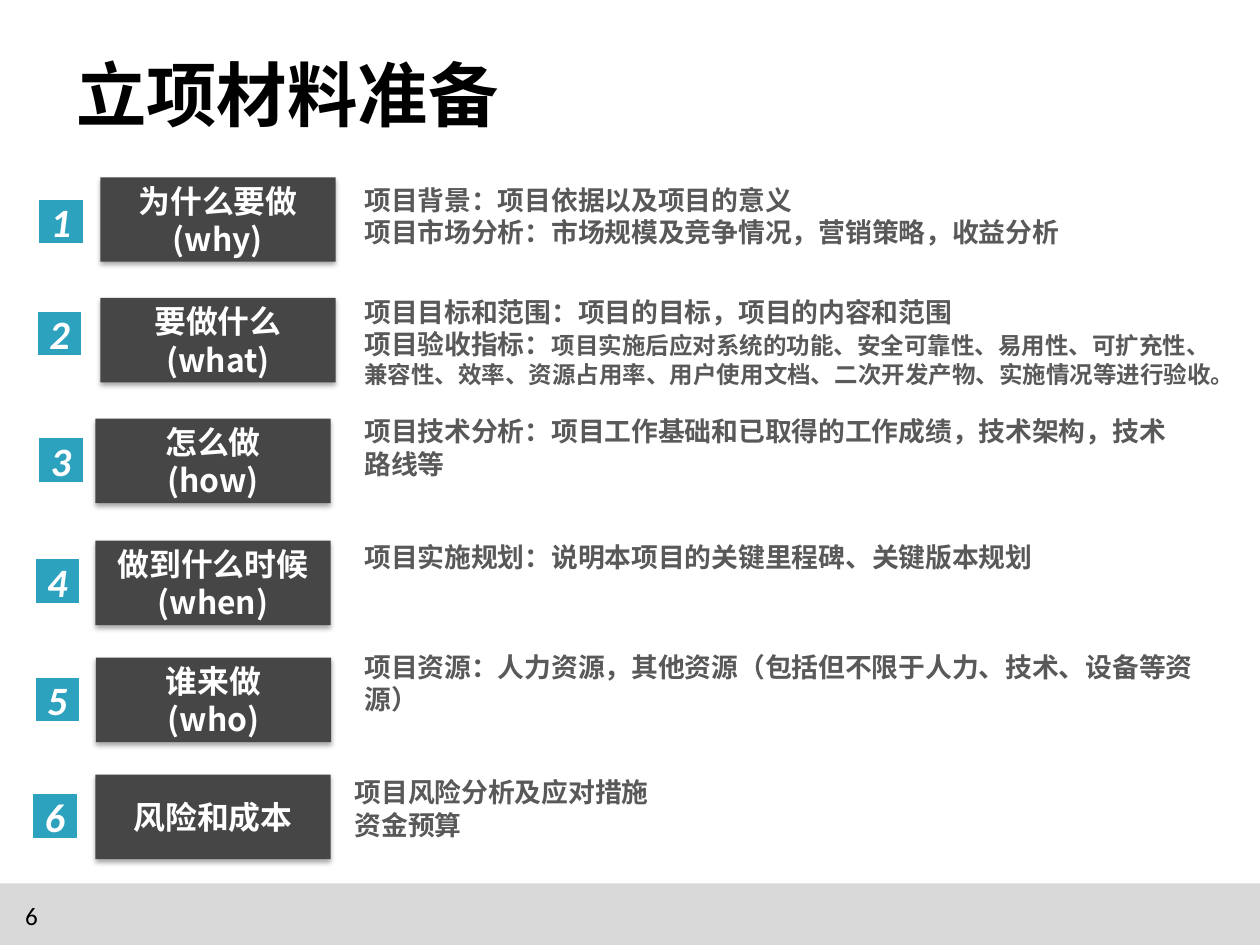
from lxml.etree import SubElement
from pptx import Presentation
from pptx.dml.color import RGBColor
from pptx.enum.shapes import MSO_SHAPE
from pptx.enum.text import MSO_ANCHOR, MSO_AUTO_SIZE, PP_ALIGN
from pptx.oxml import parse_xml
from pptx.oxml.ns import nsdecls, qn
from pptx.util import Pt

WIDTH, HEIGHT = 751.68, 563.76
BADGE_SIZE = 28
LABEL_SIZE = (140.4, 50.4)


def color(value):
    return RGBColor.from_string(value)


class SlideBuilder:
    chinese, latin = "Noto Sans CJK SC", "Calibri"
    black, white, gray = "000000", "FFFFFF", "595959"
    teal, dark, band = "2DA2BF", "464646", "D9D9D9"

    def __init__(self, slide):
        self.slide = slide

    def format_span(self, span, size, fill, face, bold=True, italic=False):
        font = span.font
        font.size, font.bold, font.italic = Pt(size), bold, italic
        font.color.rgb = color(fill)
        font.name = face
        SubElement(font._element, qn("a:ea")).set("typeface", face)

    def set_margins(self, frame, side, end):
        frame.margin_left = frame.margin_right = Pt(side)
        frame.margin_top = frame.margin_bottom = Pt(end)

    def title(self, text, left, top, width, height):
        title = self.slide.shapes.title
        title.left, title.top = Pt(left), Pt(top)
        title.width, title.height = Pt(width), Pt(height)
        frame = title.text_frame
        frame.text = text
        frame.auto_size = MSO_AUTO_SIZE.NONE
        frame.vertical_anchor = MSO_ANCHOR.MIDDLE
        self.set_margins(frame, 5.8, 3.6)
        para = frame.paragraphs[0]
        para.alignment = PP_ALIGN.LEFT
        self.format_span(para.runs[0], 42, self.black, self.chinese)

    def rectangle(self, left, top, width, height, fill):
        box = self.slide.shapes.add_shape(
            MSO_SHAPE.RECTANGLE, Pt(left), Pt(top), Pt(width), Pt(height))
        box.shadow.inherit = False
        box.fill.solid()
        box.fill.fore_color.rgb = color(fill)
        box.line.fill.background()
        return box

    def center_text(self, box, text, size, face, italic=False):
        frame = box.text_frame
        frame.text = text
        frame.word_wrap = True
        frame.vertical_anchor = MSO_ANCHOR.MIDDLE
        for para in frame.paragraphs:
            para.alignment = PP_ALIGN.CENTER
            self.format_span(para.runs[0], size, self.white, face, italic=italic)

    def badge(self, number, left, top):
        box = self.rectangle(left, top, BADGE_SIZE, BADGE_SIZE, self.teal)
        box.line.color.rgb = color(self.white)
        box.line.width = Pt(2)
        self.center_text(box, str(number), 24, self.latin, italic=True)

    def label(self, text, left, top):
        box = self.rectangle(left, top, *LABEL_SIZE, self.dark)
        effects = box._element.spPr.find(qn("a:effectLst"))
        effects.append(parse_xml(
            f'<a:outerShdw {nsdecls("a")} blurRad="{Pt(3.1)}" dist="{Pt(1.8)}" '
            'dir="5400000" rotWithShape="0"><a:srgbClr val="000000">'
            '<a:alpha val="35000"/></a:srgbClr></a:outerShdw>'))
        self.center_text(box, text, 19, self.chinese)

    def text_box(self, left, top, width, height):
        box = self.slide.shapes.add_textbox(Pt(left), Pt(top), Pt(width), Pt(height))
        box.text_frame.word_wrap = True
        return box.text_frame

    def details(self, lines, left, top, width, height):
        frame = self.text_box(left, top, width, height)
        frame.auto_size = MSO_AUTO_SIZE.SHAPE_TO_FIT_TEXT
        self.set_margins(frame, 5, 2.9)
        frame.text = "\n".join(lead for lead, _ in lines)
        for para, (_, note) in zip(frame.paragraphs, lines):
            self.format_span(para.runs[0], 16, self.gray, self.chinese)
            if note:
                span = para.add_run()
                span.text = note
                self.format_span(span, 14, self.gray, self.chinese)

    def page_number(self, text, left, top, width, height):
        frame = self.text_box(left, top, width, height)
        frame.text = text
        self.format_span(frame.paragraphs[0].runs[0], 15, self.black,
                         self.latin, bold=False)


# Each topic: badge position, label and its position, detail lines and their frame
TOPICS = [
    ((22.3, 118.1), "为什么要做(why)", (59.8, 105.8),
     [("项目背景：项目依据以及项目的意义", ""),
      ("项目市场分析：市场规模及竞争情况，营销策略，收益分析", "")],
     (212.4, 106.6, 455, 43.9)),
    ((21.6, 185), "要做什么\n(what)", (59.8, 177.8),
     [("项目目标和范围：项目的目标，项目的内容和范围", ""),
      ("项目验收指标：", "项目实施后应对系统的功能、安全可靠性、易用性、可扩充性、"
       "兼容性、效率、资源占用率、用户使用文档、二次开发产物、实施情况等进行验收。")],
     (212.4, 173.5, 527.8, 61.2)),
    ((22.3, 260.6), "怎么做\n(how)", (56.9, 249.8),
     [("项目技术分析：项目工作基础和已取得的工作成绩，技术架构，技术路线等", "")],
     (212.4, 244.8, 501.1, 43.9)),
    ((20.2, 332.6), "做到什么时候(when)", (56.9, 322.6),
     [("项目实施规划：说明本项目的关键里程碑、关键版本规划", "")],
     (212.4, 319.7, 455, 25.2)),
    ((20.2, 403.2), "谁来做\n(who)", (57.2, 392.4),
     [("项目资源：人力资源，其他资源（包括但不限于人力、技术、设备等资源）", "")],
     (212.4, 385.2, 527.8, 25.2)),
    ((18.7, 473), "风险和成本", (56.9, 462.2),
     [("项目风险分析及应对措施", ""), ("资金预算", "")],
     (206.6, 460.1, 190, 43.9)),
]


def main():
    deck = Presentation()
    deck.slide_width, deck.slide_height = Pt(WIDTH), Pt(HEIGHT)
    page = SlideBuilder(deck.slides.add_slide(deck.slide_layouts[5]))

    # Title and footer
    page.title("立项材料准备", 39.6, 27.4, 535, 56.9)
    page.rectangle(0, 527, WIDTH, HEIGHT - 527, page.band)
    page.page_number("6", 7.9, 533.5, 82.8, 23.8)

    # Topics
    for number, topic in enumerate(TOPICS, start=1):
        badge_at, label, label_at, lines, frame = topic
        page.badge(number, *badge_at)
        page.label(label, *label_at)
        page.details(lines, *frame)

    deck.save("out.pptx")


if __name__ == "__main__":
    main()
